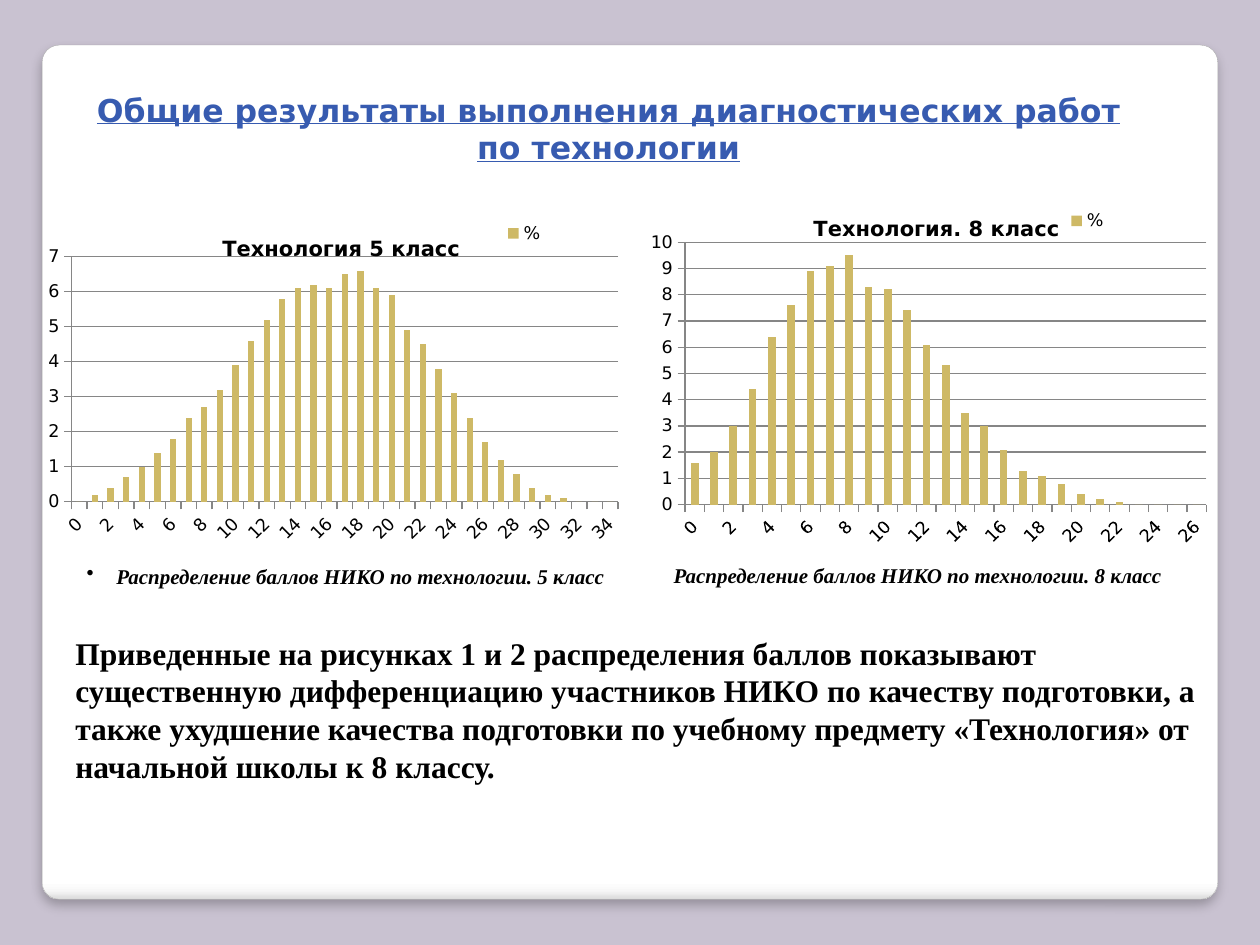
"""Build the slide on the score distributions in technology for grades 5 and 8."""
from lxml import etree
from pptx import Presentation
from pptx.chart.data import CategoryChartData
from pptx.dml.color import RGBColor
from pptx.enum.chart import XL_CHART_TYPE, XL_LEGEND_POSITION, XL_TICK_MARK
from pptx.enum.shapes import MSO_SHAPE
from pptx.enum.text import MSO_ANCHOR, PP_ALIGN
from pptx.oxml import parse_xml
from pptx.oxml.ns import qn
from pptx.util import Cm, Pt

COLUMN = XL_CHART_TYPE.COLUMN_CLUSTERED
LEGEND_RIGHT = XL_LEGEND_POSITION.RIGHT
TICK_OUT, TICK_NONE = XL_TICK_MARK.OUTSIDE, XL_TICK_MARK.NONE
ROUNDED = MSO_SHAPE.ROUNDED_RECTANGLE
TOP, MIDDLE = MSO_ANCHOR.TOP, MSO_ANCHOR.MIDDLE
LEFT, CENTER = PP_ALIGN.LEFT, PP_ALIGN.CENTER
SANS, SERIF = "DejaVu Sans", "Times New Roman"
DRAWING = 'xmlns:a="http://schemas.openxmlformats.org/drawingml/2006/main"'
COLORS = {
    "background": "C9C2D1",
    "panel_line": "A4A4A4",
    "title": "375BB0",
    "text": "000000",
    "column": "CEB966",
    "grid": "868686",
}
COLORS = {name: RGBColor.from_string(value) for name, value in COLORS.items()}


def set_font(font, name, size, color, bold=False, italic=False):
    """Format a font."""
    font.name, font.size = name, Pt(size)
    font.bold, font.italic = bold, italic
    font.color.rgb = color


def set_layout(parent, index, **values):
    """Place a chart part by fractions of the chart area."""
    for old in parent.findall(qn("c:layout")):
        parent.remove(old)
    layout = etree.Element(qn("c:layout"))
    manual = etree.SubElement(layout, qn("c:manualLayout"))
    for name, value in values.items():
        etree.SubElement(manual, qn(f"c:{name}")).set("val", str(value))
    parent.insert(index, layout)


presentation = Presentation()
presentation.slide_width, presentation.slide_height = Cm(25.4), Cm(19.05)
slide = presentation.slides.add_slide(presentation.slide_layouts[5])
slide.background.fill.solid()
slide.background.fill.fore_color.rgb = COLORS["background"]

panel = slide.shapes.add_shape(ROUNDED, Cm(0.85), Cm(0.91), Cm(23.7), Cm(17.22))
panel.adjustments[0] = 0.02
panel.line.color.rgb = COLORS["panel_line"]
panel.line.width = Pt(0.16)
panel_properties = panel._element.spPr
stops = "".join(
    f'<a:gs pos="{position}000"><a:srgbClr val="{color}"/></a:gs>'
    for position, color in ((0, "FFFFFF"), (98, "FFFFFF"), (99, "F7F7F7"), (100, "DADADA"))
)
panel_properties.insert(2, parse_xml(
    f'<a:gradFill {DRAWING}><a:gsLst>{stops}</a:gsLst><a:lin ang="5400000"/></a:gradFill>'
))
panel_properties.append(parse_xml(
    f'<a:effectLst {DRAWING}><a:outerShdw blurRad="{Pt(6)}" dist="{Pt(4)}" dir="5400000">'
    '<a:srgbClr val="000000"><a:alpha val="25000"/></a:srgbClr></a:outerShdw></a:effectLst>'
))
slide.shapes._spTree.insert(2, panel._element)

title = slide.shapes.title
title.left, title.top, title.width, title.height = Cm(1.47), Cm(1.7), Cm(21.6), Cm(6.4)
title.text_frame.text = "Общие результаты выполнения диагностических работ по технологии"
title.text_frame.word_wrap = True
title.text_frame.vertical_anchor = TOP
title.text_frame.paragraphs[0].alignment = CENTER
title_font = title.text_frame.paragraphs[0].runs[0].font
set_font(title_font, SANS, 18, COLORS["title"], bold=True)
title_font.underline = True

charts = [
    (
        "Технология 5 класс", (0.85, 4.23, 11.85, 6.77), (0.05, 0.14, 0.93, 0.73),
        (0.3, 0.06), (0.77, 0.03), 7,
        [0, 0.2, 0.4, 0.7, 1, 1.4, 1.8, 2.4, 2.7, 3.2, 3.9, 4.6, 5.2, 5.8, 6.1, 6.2, 6.1, 6.5,
         6.6, 6.1, 5.9, 4.9, 4.5, 3.8, 3.1, 2.4, 1.7, 1.2, 0.8, 0.4, 0.2, 0.1, 0, 0, 0],
    ),
    (
        "Технология. 8 класс", (13.12, 3.81, 11.43, 7.2), (0.06, 0.15, 0.92, 0.74),
        (0.28, 0.06), (0.72, 0.05), 10,
        [1.6, 2, 3, 4.4, 6.4, 7.6, 8.9, 9.1, 9.5, 8.3, 8.2, 7.4, 6.1, 5.3, 3.5, 3, 2.1, 1.3,
         1.1, 0.8, 0.4, 0.2, 0.1, 0, 0, 0, 0],
    ),
]
for heading, box, plot_box, heading_at, legend_at, maximum, scores in charts:
    chart_data = CategoryChartData()
    chart_data.categories = [str(score) for score in range(len(scores))]
    chart_data.add_series("%", scores)
    chart = slide.shapes.add_chart(COLUMN, *map(Cm, box), chart_data).chart
    set_font(chart.font, SANS, 10, COLORS["text"])

    chart.has_title = True
    chart.chart_title.text_frame.text = heading
    heading_run = chart.chart_title.text_frame.paragraphs[0].runs[0]
    set_font(heading_run.font, SANS, 12, COLORS["text"], bold=True)
    set_layout(chart.chart_title._element, 1, xMode="edge", yMode="edge",
               x=heading_at[0], y=heading_at[1])

    chart.has_legend = True
    chart.legend.position = LEGEND_RIGHT
    chart.legend.include_in_layout = False
    set_layout(chart.legend._element, 1, xMode="edge", yMode="edge",
               x=legend_at[0], y=legend_at[1], w=0.1, h=0.08)

    x, y, width, height = plot_box
    set_layout(chart._chartSpace.chart.plotArea, 0, layoutTarget="inner",
               xMode="edge", yMode="edge", x=x, y=y, w=width, h=height)
    plot = chart.plots[0]
    plot.gap_width = 150
    plot.vary_by_categories = False
    plot.series[0].format.fill.solid()
    plot.series[0].format.fill.fore_color.rgb = COLORS["column"]

    value_axis, category_axis = chart.value_axis, chart.category_axis
    value_axis.minimum_scale, value_axis.maximum_scale = 0, maximum
    value_axis.major_unit = 1
    value_axis.has_major_gridlines = True
    for axis in (value_axis, category_axis):
        axis.major_tick_mark, axis.minor_tick_mark = TICK_OUT, TICK_NONE
        axis.format.line.color.rgb = COLORS["grid"]
        set_font(axis.tick_labels.font, SANS, 10, COLORS["text"])
    value_axis.major_gridlines.format.line.color.rgb = COLORS["grid"]
    category_axis._element.find(qn("c:txPr")).find(qn("a:bodyPr")).set("rot", "-2700000")
    label_skip = etree.Element(qn("c:tickLblSkip"))
    label_skip.set("val", "2")
    category_axis._element.find(qn("c:noMultiLvlLbl")).addprevious(label_skip)

texts = [
    ("Распределение баллов НИКО по технологии. 5 класс",
     (1.27, 11.22, 11.85, 0.77), 12, True, CENTER, MIDDLE, True),
    ("Распределение баллов НИКО по технологии. 8 класс",
     (13.33, 11.22, 10.8, 0.77), 12, True, LEFT, TOP, False),
    ("Приведенные на рисунках 1 и 2 распределения баллов показывают существенную "
     "дифференциацию участников НИКО по качеству подготовки, а также ухудшение качества "
     "подготовки по учебному предмету «Технология» от начальной школы к 8 классу.",
     (1.27, 12.65, 23.28, 3.33), 18, False, LEFT, TOP, False),
]
for text, box, size, italic, alignment, anchor, bulleted in texts:
    text_frame = slide.shapes.add_textbox(*map(Cm, box)).text_frame
    text_frame.word_wrap = True
    text_frame.vertical_anchor = anchor
    text_frame.text = text
    paragraph = text_frame.paragraphs[0]
    paragraph.alignment = alignment
    if bulleted:
        bullet = etree.SubElement(paragraph._p.get_or_add_pPr(), qn("a:buChar"))
        bullet.set("char", "•")
    set_font(paragraph.runs[0].font, SERIF, size, COLORS["text"], bold=True, italic=italic)

presentation.save("out.pptx")
